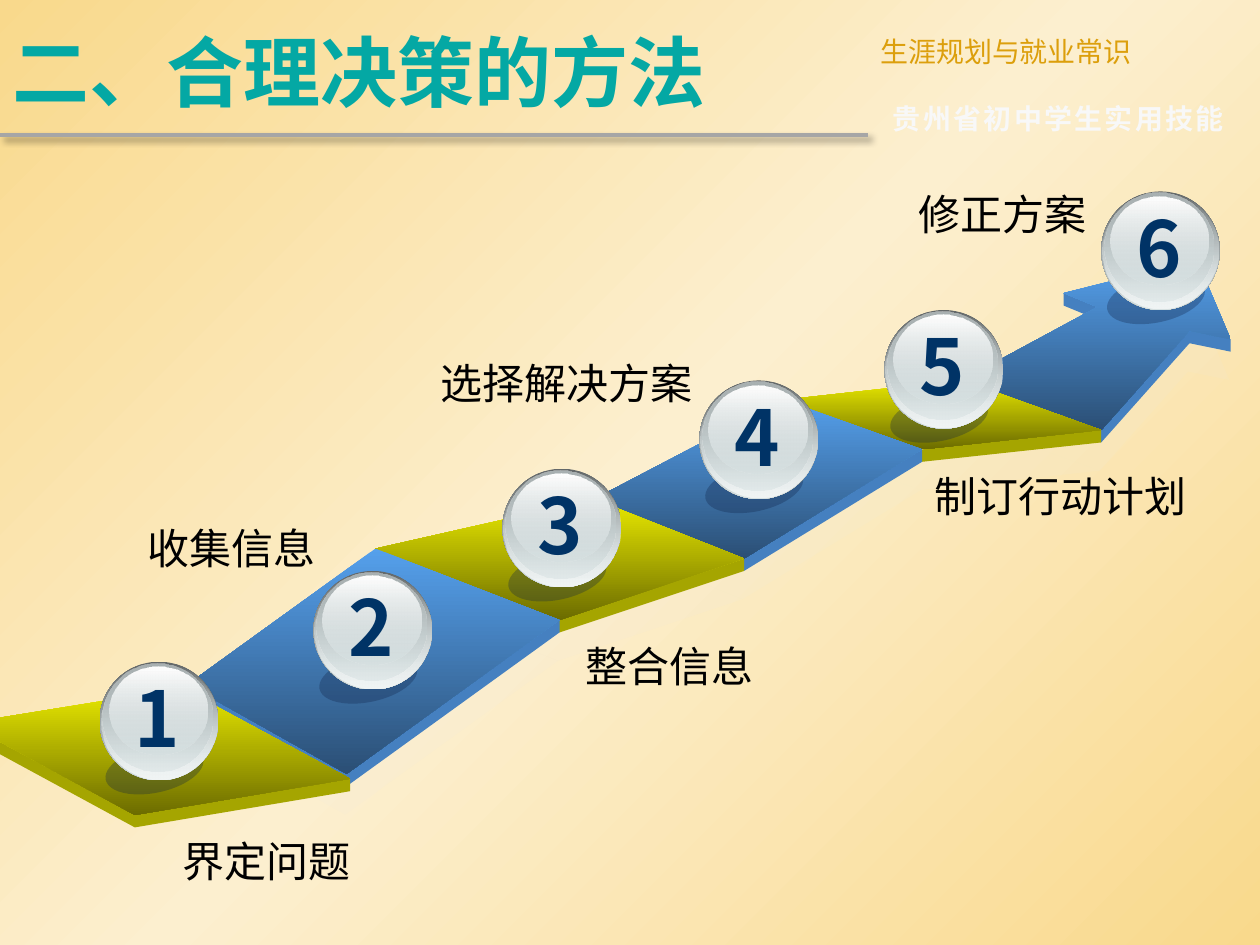
import lxml.etree
import pptx
import pptx.dml.color
import pptx.enum.shapes
import pptx.enum.text
import pptx.oxml.ns
import pptx.util

Cm, Pt, qn = pptx.util.Cm, pptx.util.Pt, pptx.oxml.ns.qn
ANCHOR, ALIGN = pptx.enum.text.MSO_ANCHOR, pptx.enum.text.PP_ALIGN

COLOURS = {
    "sand": "F9D98C", "cream": "FCEFCF", "grey": "A6A6A6", "gold": "DC9F0C",
    "teal": "04A8A4", "snow": "F8F8F8", "haze": "EAEAEA", "black": "000000",
    "navy": "003366", "dusk": "0F2145", "white": "FFFFFF",
    "sky": "55A0EC", "deep blue": "2B4F75", "side blue": "4580C0",
    "yellow": "EAEA00", "olive": "6C6C00", "side yellow": "A5A500",
    "steel": "636869", "mist": "D6E1E2", "pearl": "F1F5F5", "silver": "AAB2B3",
}
FORMATS = {
    "title": {"size": Pt(44), "bold": True, "colour": "teal"},
    "course": {"size": Pt(16), "bold": False, "colour": "gold"},
    "banner": {"size": Pt(16), "bold": True, "colour": "snow"},
    "label": {"size": Pt(24), "bold": False, "colour": "black"},
    "digit": {"size": Pt(44), "bold": True, "colour": "navy"},
}
BAND_FILLS = {
    "blue": [("sky", 100), ("deep blue", 100)],
    "yellow": [("yellow", 100), ("olive", 100)],
}
BADGE_LAYERS = [
    ((0.1, 1.7, 2.01, 0.94), 347.9, [("dusk", 30)]),
    ((0, 0, 2.39, 2.39), 0, [("steel", 100), ("mist", 100)]),
    ((0.03, 0.03, 2.34, 2.34), 0, [("mist", 0), ("pearl", 100)]),
    ((0.06, 0.03, 2.21, 2.18), 0, [("silver", 100), ("mist", 48)]),
    ((0.19, 0.1, 1.98, 1.78), 0, [("white", 100), ("mist", 38)]),
]
JOINTS = [
    ((3.78, 13.8), (6.99, 15.6)),
    ((7.57, 11.06), (11.28, 12.5)),
    ((11.98, 10.06), (15, 11.26)),
    ((15.8, 8.06), (18.59, 9.06)),
    ((19.4, 7.66), (22.2, 8.67)),
]
ARROW_RIGHT = [(23.98, 6.67), (24.81, 6.84)]
ARROW_LEFT = [(21.44, 5.91), (22.12, 6.19)]
ARROW_TIP = (24.13, 5.23)
FIRST_BAND = [(-0.69, 14.58), (2.72, 16.43), (7.06, 15.7), (3.68, 13.87)]
STEPS = [
    ("界定问题", (3.43, 16.71), (2.01, 13.34)),
    ("收集信息", (2.72, 10.41), (6.32, 11.51)),
    ("整合信息", (11.56, 12.78), (10.13, 9.45)),
    ("选择解决方案", (8.64, 7.09), (14.1, 7.67)),
    ("制订行动计划", (18.59, 9.37), (17.83, 6.25)),
    ("修正方案", (18.26, 3.68), (22.2, 3.86)),
]


def moved(points, right, down):
    """Return the points shifted by the given distances."""
    return [(x + right, y + down) for x, y in points]


class Deck:
    """Holds the style and the current slide."""

    font_name = "Noto Sans CJK SC"
    thickness = 0.25

    def __init__(self):
        """Start a one-slide presentation."""
        self.presentation = pptx.Presentation()
        self.presentation.slide_width = Cm(25.4)
        self.presentation.slide_height = Cm(19.05)
        self.slide = self.presentation.slides.add_slide(self.presentation.slide_layouts[6])
        self.shapes = self.slide.shapes

    def rgb(self, name):
        """Return the named colour."""
        return pptx.dml.color.RGBColor.from_string(COLOURS[name])

    def paint(self, fill, element, stops, angle=270):
        """Fill with one colour or an even gradient of (colour, opacity) stops."""
        if len(stops) == 1:
            fill.solid()
            fill.fore_color.rgb = self.rgb(stops[0][0])
            colours = [element.find(".//" + qn("a:srgbClr"))]
        else:
            fill.gradient()
            fill.gradient_angle = angle
            stop_list = element.find(".//" + qn("a:gsLst"))
            for stop in list(stop_list):
                stop_list.remove(stop)
            colours = []
            for index, (name, _) in enumerate(stops):
                position = str(100000 * index // (len(stops) - 1))
                stop = lxml.etree.SubElement(stop_list, qn("a:gs"), pos=position)
                colours.append(lxml.etree.SubElement(stop, qn("a:srgbClr"), val=COLOURS[name]))
        for colour, (_, opacity) in zip(colours, stops):
            if opacity < 100:
                lxml.etree.SubElement(colour, qn("a:alpha"), val=str(opacity * 1000))

    def background(self, *names):
        """Give the slide a diagonal gradient."""
        fill = self.slide.background.fill
        self.paint(fill, self.slide.element, [(name, 100) for name in names], 315)

    def finish(self, shape, stops):
        """Fill a shape and take away its outline and shadow."""
        self.paint(shape.fill, shape.element.spPr, stops)
        shape.line.fill.background()
        shape.shadow.inherit = False

    def effect(self, blur, distance, opacity):
        """Return an effect list with a black shadow to the lower right."""
        effects = lxml.etree.Element(qn("a:effectLst"))
        shadow = lxml.etree.SubElement(effects, qn("a:outerShdw"), blurRad=str(Pt(blur)),
                                       dist=str(Pt(distance)), dir="2700000")
        colour = lxml.etree.SubElement(shadow, qn("a:srgbClr"), val=COLOURS["black"])
        lxml.etree.SubElement(colour, qn("a:alpha"), val=str(opacity * 1000))
        return effects

    def polygon(self, points, stops):
        """Draw a closed outline."""
        corners = [(Cm(x), Cm(y)) for x, y in points]
        builder = self.shapes.build_freeform(*corners[0], scale=1.0)
        builder.add_line_segments(corners[1:], close=True)
        self.finish(builder.convert_to_shape(), stops)

    def ellipse(self, box, rotation, stops):
        """Draw an ellipse."""
        shape = self.shapes.add_shape(pptx.enum.shapes.MSO_SHAPE.OVAL, *map(Cm, box))
        shape.rotation = rotation
        self.finish(shape, stops)

    def rule(self, start, end):
        """Draw a shadowed line."""
        straight = pptx.enum.shapes.MSO_CONNECTOR.STRAIGHT
        line = self.shapes.add_connector(straight, *map(Cm, start + end))
        line.line.color.rgb = self.rgb("grey")
        line.line.width = Pt(2.25)
        line.element.spPr.append(self.effect(4, 3, 40))

    def text(self, text, box, style, wrap=True, inset=True, anchor=ANCHOR.TOP,
             align=ALIGN.LEFT, spacing=0, shadow=False):
        """Write one line of text."""
        frame = self.shapes.add_textbox(*map(Cm, box)).text_frame
        frame.word_wrap = wrap
        frame.vertical_anchor = anchor
        if not inset:
            for side in ("left", "top", "right", "bottom"):
                setattr(frame, "margin_" + side, 0)
        paragraph = frame.paragraphs[0]
        paragraph.alignment = align
        run = paragraph.add_run()
        run.text = text
        values = dict(FORMATS[style], name=self.font_name)
        run.font.color.rgb = self.rgb(values.pop("colour"))
        for name, value in values.items():
            setattr(run.font, name, value)
        properties = run.font._element
        lxml.etree.SubElement(properties, qn("a:ea"), typeface=self.font_name)
        if spacing:
            properties.set("spc", str(spacing))
        if shadow:
            properties.find(qn("a:solidFill")).addnext(self.effect(0, 2, 100))

    def band(self, points, hue, edges):
        """Draw a thick band: its visible lower edges, then its face."""
        for edge in edges:
            lower = moved(reversed(edge), 0, self.thickness)
            self.polygon(edge + lower, [("side " + hue, 100)])
        self.polygon(points, BAND_FILLS[hue])

    def badge(self, number, left, top):
        """Draw a glossy numbered ball as a group."""
        self.shapes = self.slide.shapes.add_group_shape().shapes
        for (right, down, width, height), rotation, stops in BADGE_LAYERS:
            self.ellipse((left + right, top + down, width, height), rotation, stops)
        self.text(str(number), (left + 0.71, top + 0.18, 0.76, 1.88), "digit",
                  inset=False, shadow=True)
        self.shapes = self.slide.shapes


def main():
    """Build the slide and save it."""
    deck = Deck()
    deck.background("sand", "cream", "sand")
    deck.rule((0, 2.72), (17.5, 2.72))
    deck.text("生涯规划与就业常识", (17.5, 0.58, 7.9, 0.94), "course", align=ALIGN.JUSTIFY)
    deck.text("贵州省初中学生实用技能", (18, 1.93, 7.2, 0.9), "banner",
              wrap=False, inset=False, anchor=ANCHOR.MIDDLE, spacing=140)
    deck.text("二、合理决策的方法", (0, 0.13, 17.5, 2.59), "title", anchor=ANCHOR.MIDDLE)

    front = list(JOINTS[-1]) + ARROW_RIGHT
    bands = [(front + [ARROW_TIP] + ARROW_LEFT, "blue", [front, ARROW_LEFT])]
    for index in reversed(range(len(JOINTS) - 1)):
        (upper, lower), (next_upper, next_lower) = JOINTS[index:index + 2]
        edge = [upper, lower, next_lower]
        bands.append((edge + [next_upper], "yellow" if index % 2 else "blue", [edge]))
    for points, _, _ in bands:
        deck.polygon(moved(points, -0.03, 0.82), [("haze", 10)])
    bands.append((FIRST_BAND, "yellow", [FIRST_BAND[:3]]))
    for band in bands:
        deck.band(*band)

    for number, (label, label_place, badge_place) in enumerate(STEPS, 1):
        deck.badge(number, *badge_place)
        width = 0.55 + 0.85 * len(label)
        deck.text(label, (*label_place, width, 1.27), "label", wrap=False)
    deck.presentation.save("out.pptx")


if __name__ == "__main__":
    main()
